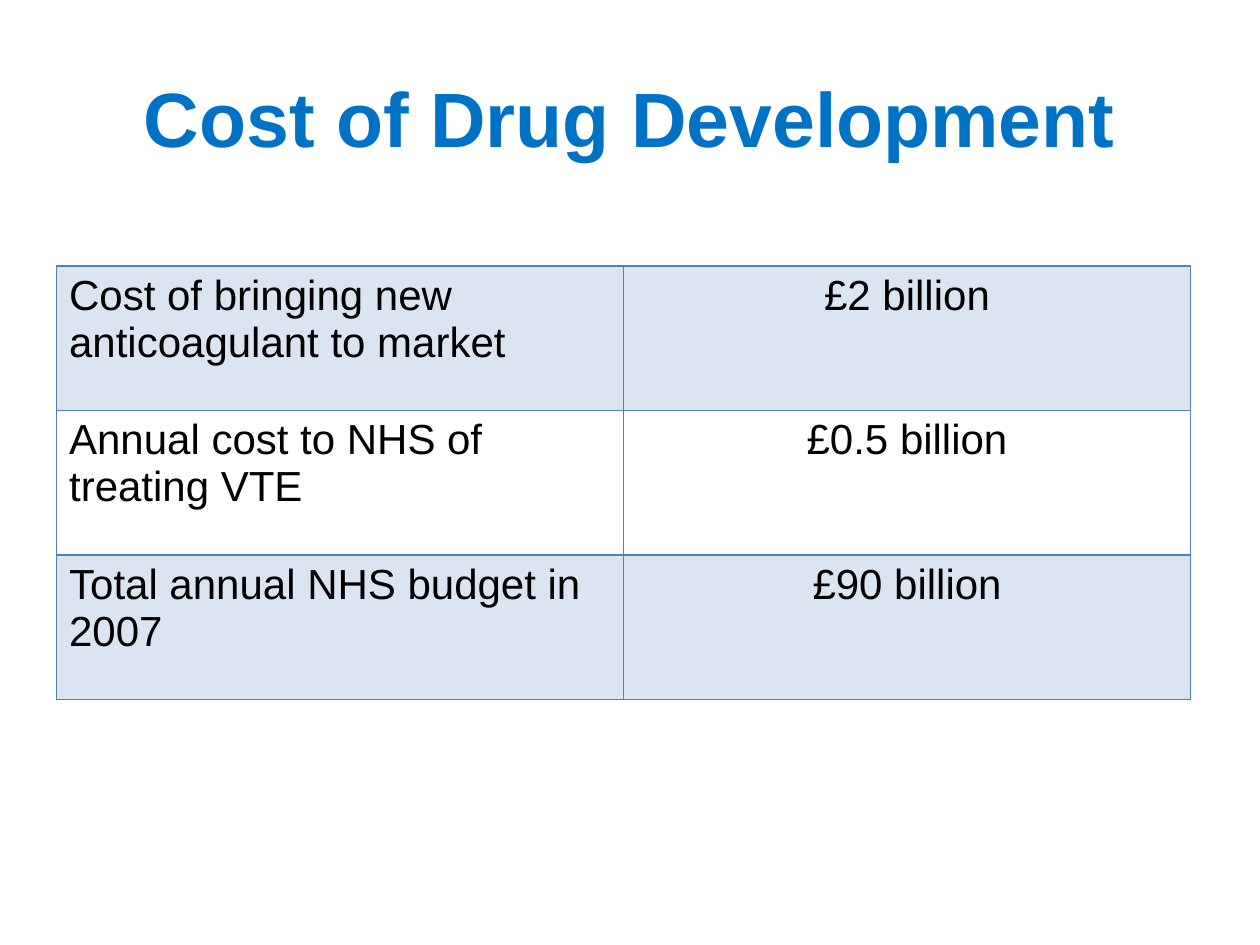
from lxml import etree
from pptx import Presentation
from pptx import util as u
from pptx.dml.color import RGBColor
from pptx.enum import text
from pptx.oxml.ns import qn

FONT = "Arial"
TITLE_BLUE = RGBColor(0x00, 0x72, 0xC6)
TABLE_BLUE = RGBColor(0x4F, 0x81, 0xBD)
BLACK = RGBColor(0, 0, 0)
COSTS = [
    ("Cost of bringing new anticoagulant to market", "£2 billion"),
    ("Annual cost to NHS of treating VTE", "£0.5 billion"),
    ("Total annual NHS budget in 2007", "£90 billion"),
]


def write(tf, words, size, color, align, bold=False):
    """Put one formatted paragraph into a text frame."""
    tf.word_wrap = True
    p = tf.paragraphs[0]
    p.text = words
    p.alignment = align
    p.font.name = FONT
    p.font.size = u.Pt(size)
    p.font.bold = bold
    p.font.color.rgb = color


def add_title(s, words):
    """Add the centred slide title."""
    tf = s.shapes.add_textbox(u.Cm(1.27), u.Cm(0.76), u.Cm(22.86), u.Cm(3.18)).text_frame
    tf.vertical_anchor = text.MSO_ANCHOR.MIDDLE
    write(tf, words, 44, TITLE_BLUE, text.PP_ALIGN.CENTER, bold=True)


def add_borders(cell):
    """Draw a thin blue line on all four sides of a cell."""
    tc_pr = cell._tc.get_or_add_tcPr()
    for side in ("lnL", "lnR", "lnT", "lnB"):
        ln = etree.SubElement(tc_pr, qn(f"a:{side}"), w=str(u.Pt(1)))
        fill = etree.SubElement(ln, qn("a:solidFill"))
        etree.SubElement(fill, qn("a:srgbClr"), val=str(TABLE_BLUE))


def tint(cell, percent):
    """Fill a cell with see-through blue."""
    cell.fill.solid()
    cell.fill.fore_color.rgb = TABLE_BLUE
    color = cell._tc.tcPr.find(qn("a:solidFill")).find(qn("a:srgbClr"))
    etree.SubElement(color, qn("a:alpha"), val=str(percent * 1000))


def add_cost_table(s, rows):
    """Add the two-column cost table with every other row tinted."""
    table = s.shapes.add_table(
        len(rows), 2, u.Cm(1.14), u.Cm(5.36), u.Cm(22.86), u.Cm(8.74)
    ).table
    table.first_row = False
    table.horz_banding = False
    aligns = (text.PP_ALIGN.LEFT, text.PP_ALIGN.CENTER)
    for i, row in enumerate(rows):
        for j, (words, align) in enumerate(zip(row, aligns)):
            cell = table.cell(i, j)
            write(cell.text_frame, words, 24, BLACK, align)
            add_borders(cell)
            if i % 2 == 0:
                tint(cell, 20)
            else:
                cell.fill.background()


def main():
    """Build and save the slide."""
    prs = Presentation()
    prs.slide_width, prs.slide_height = u.Cm(25.4), u.Cm(19.05)
    s = prs.slides.add_slide(prs.slide_layouts[6])
    add_title(s, "Cost of Drug Development")
    add_cost_table(s, COSTS)
    prs.save("out.pptx")


if __name__ == "__main__":
    main()
